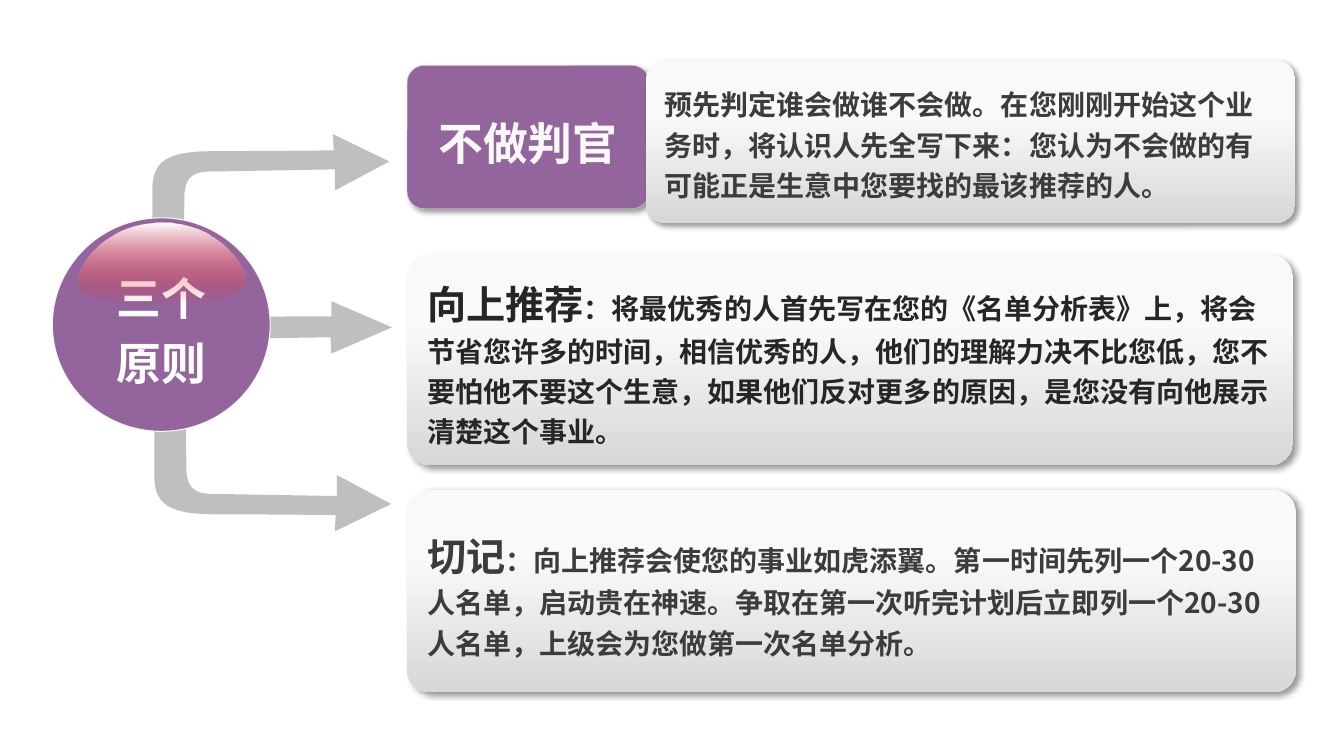
from lxml import etree
from pptx import Presentation
from pptx import util as u
from pptx.dml import color
from pptx.enum import shapes, text
from pptx.oxml import ns

FONT = "Noto Sans CJK SC"
PURPLE, GREY, PALE, SILVER, DARK = "94659C", "BFBFBF", "F9F9F9", "D7D7D7", "3C3C3C"
PANEL_STOPS = [(0.33, PALE), (1, SILVER)]

# Outlines in cm within their box: two numbers make a line, six a Bézier curve
BENT_ARROW = [
    (0.76, 4.62), (0.81, 1.5), (0.86, 0.94, 1.17, 0.94, 1.7, 0.94),
    (4.6, 0.89), (4.6, 1.42), (5.97, 0.69), (4.55, 0), (4.57, 0.41),
    (4.57, 0.41, 2.59, 0.43, 1.5, 0.43), (0.38, 0.43, 0.03, 0.69, 0, 1.32),
    (0, 4.67), (0.13, 5.21, 0.61, 5.16, 0.76, 4.62)]
STRAIGHT_ARROW = [(0, 0.99), (5.54, 0.91), (5.56, 1.32), (7.09, 0.66),
                  (5.56, 0), (5.56, 0.38), (0, 0.41)]
GLOSS = [
    (0, 1.47), (0.15, 0.65, 1.1, 0, 2.13, 0), (3.1, 0, 3.9, 0.55, 4.24, 1.37),
    (4.2, 1.85, 3.4, 2.03, 2.64, 2.03), (1.52, 2.03),
    (0.75, 2.03, 0, 1.85, 0, 1.47)]


def rgb(value):
    return color.RGBColor.from_string(value)


def set_values(target, values):
    for name, value in values.items():
        setattr(target, name, value)


def paint(shape, fill, line=None, width=0):
    """Fill with a hex colour or with two gradient stops running downwards."""
    if isinstance(fill, str):
        shape.fill.solid()
        shape.fill.fore_color.rgb = rgb(fill)
    else:
        shape.fill.gradient()
        shape.fill.gradient_angle = 270
        for stop, (position, value) in zip(shape.fill.gradient_stops, fill):
            stop.position = position
            stop.color.rgb = rgb(value)
    if line:
        shape.line.color.rgb = rgb(line)
        shape.line.width = u.Pt(width)
    else:
        shape.line.fill.background()
    shape.shadow.inherit = False


def add_shadow(shape):
    effects = shape._element.spPr.find(ns.qn("a:effectLst"))
    shadow = etree.SubElement(effects, ns.qn("a:outerShdw"), blurRad=str(u.Pt(4)),
                              dist=str(u.Pt(3)), dir="2700000", algn="tl", rotWithShape="0")
    black = etree.SubElement(shadow, ns.qn("a:srgbClr"), val="000000")
    etree.SubElement(black, ns.qn("a:alpha"), val="40000")


def write(shape, runs, value, align, inset, font=FONT):
    frame = shape.text_frame
    set_values(frame, {
        "word_wrap": True, "vertical_anchor": text.MSO_ANCHOR.MIDDLE,
        "margin_left": u.Cm(inset), "margin_right": u.Cm(inset),
        "margin_top": u.Cm(0.18), "margin_bottom": u.Cm(0.18)})
    paragraph = frame.paragraphs[0]
    set_values(paragraph, {"alignment": align, "line_spacing": 1.2})
    for words, size in runs:
        run = paragraph.add_run()
        run.text = words
        set_values(run.font, {"size": u.Pt(size), "bold": True, "name": font})
        run.font.color.rgb = rgb(value)
        latin = run.font._element.find(ns.qn("a:latin"))
        east_asian = etree.Element(ns.qn("a:ea"), typeface=FONT)
        latin.addnext(east_asian)


def trace(outline, steps=12):
    """Turn an outline into plain points."""
    points = [outline[0]]
    for part in outline[1:]:
        if len(part) == 2:
            points.append(part)
            continue
        start, curve = points[-1], (part[:2], part[2:4], part[4:])
        for step in range(1, steps + 1):
            t = step / steps
            weights = ((1 - t) ** 3, 3 * t * (1 - t) ** 2, 3 * t * t * (1 - t), t ** 3)
            points.append(tuple(
                sum(w * p[axis] for w, p in zip(weights, (start, *curve)))
                for axis in (0, 1)))
    return points


def add_outline(slide, left, top, outline, fill, flip_height=None):
    """Draw an outline, upside down if the height to flip in is given."""
    points = [(u.Cm(left + x), u.Cm(top + (flip_height - y if flip_height else y)))
              for x, y in trace(outline)]
    builder = slide.shapes.build_freeform(*points[0])
    builder.add_line_segments(points[1:], close=True)
    shape = builder.convert_to_shape()
    paint(shape, fill)
    return shape


def add_arrows(slide, left, top):
    add_outline(slide, left + 1.1, top + 4.8, BENT_ARROW, GREY, flip_height=5.21)
    add_outline(slide, left, top + 4.21, STRAIGHT_ARROW, GREY)
    add_outline(slide, left + 1.05, top, BENT_ARROW, GREY)


def add_glossy_circle(slide, left, top, width, height, words):
    circle = slide.shapes.add_shape(shapes.MSO_SHAPE.OVAL, *map(u.Cm, (left, top, width, height)))
    paint(circle, PURPLE, PALE, 0.75)
    write(circle, [(words, 32)], "FFFFFF", text.PP_ALIGN.CENTER, 0.38, "Arial")
    gloss = add_outline(slide, left + 0.64, top + 0.12, GLOSS, [(0, "FFFFFF"), (1, "FF0000")])
    end_colour = list(gloss._element.spPr.iter(ns.qn("a:srgbClr")))[-1]
    etree.SubElement(end_colour, ns.qn("a:alpha"), val="0")


def add_panel(slide, left, top, width, height, runs, value=DARK):
    panel = slide.shapes.add_shape(
        shapes.MSO_SHAPE.ROUNDED_RECTANGLE, *map(u.Cm, (left, top, width, height)))
    panel.adjustments[0] = 0.115
    paint(panel, PANEL_STOPS)
    add_shadow(panel)
    write(panel, runs, value, text.PP_ALIGN.LEFT, 0.33)


def add_label(slide, left, top, width, height, words):
    label = slide.shapes.add_shape(
        shapes.MSO_SHAPE.ROUNDED_RECTANGLE, *map(u.Cm, (left, top, width, height)))
    label.adjustments[0] = 0.119
    paint(label, PURPLE, SILVER, 0.25)
    add_shadow(label)
    write(label, [(words, 32)], PALE, text.PP_ALIGN.CENTER, 0.36)


def main():
    presentation = Presentation()
    set_values(presentation, {"slide_width": u.Cm(33.87), "slide_height": u.Cm(19.05)})
    slide = presentation.slides.add_slide(presentation.slide_layouts[6])

    # Arrows from the hub to each principle
    add_arrows(slide, 2.79, 3.38)

    # Second and third principles
    add_panel(slide, 10.26, 6.4, 22.33, 5.33, [
        ("向上推荐", 28),
        ("：将最优秀的人首先写在您的《名单分析表》上，将会节省您许多的时间，"
         "相信优秀的人，他们的理解力决不比您低，您不要怕他不要这个生意，"
         "如果他们反对更多的原因，是您没有向他展示清楚这个事业。", 20)], "262626")
    add_panel(slide, 10.26, 12.34, 22.4, 5.11, [
        ("切记", 28),
        ("：向上推荐会使您的事业如虎添翼。第一时间先列一个20-30人名单，启动贵在神速。"
         "争取在第一次听完计划后立即列一个20-30人名单，上级会为您做第一次名单分析。", 20)])

    # Hub
    add_glossy_circle(slide, 1.32, 5.49, 5.49, 5.38, "三个原则")

    # First principle
    add_label(slide, 10.26, 1.65, 6.1, 3.61, "不做判官")
    add_panel(slide, 16.28, 1.52, 16.36, 4.09, [
        ("预先判定谁会做谁不会做。在您刚刚开始这个业务时，将认识人先全写下来："
         "您认为不会做的有可能正是生意中您要找的最该推荐的人。", 20)])

    presentation.save("out.pptx")


if __name__ == "__main__":
    main()
